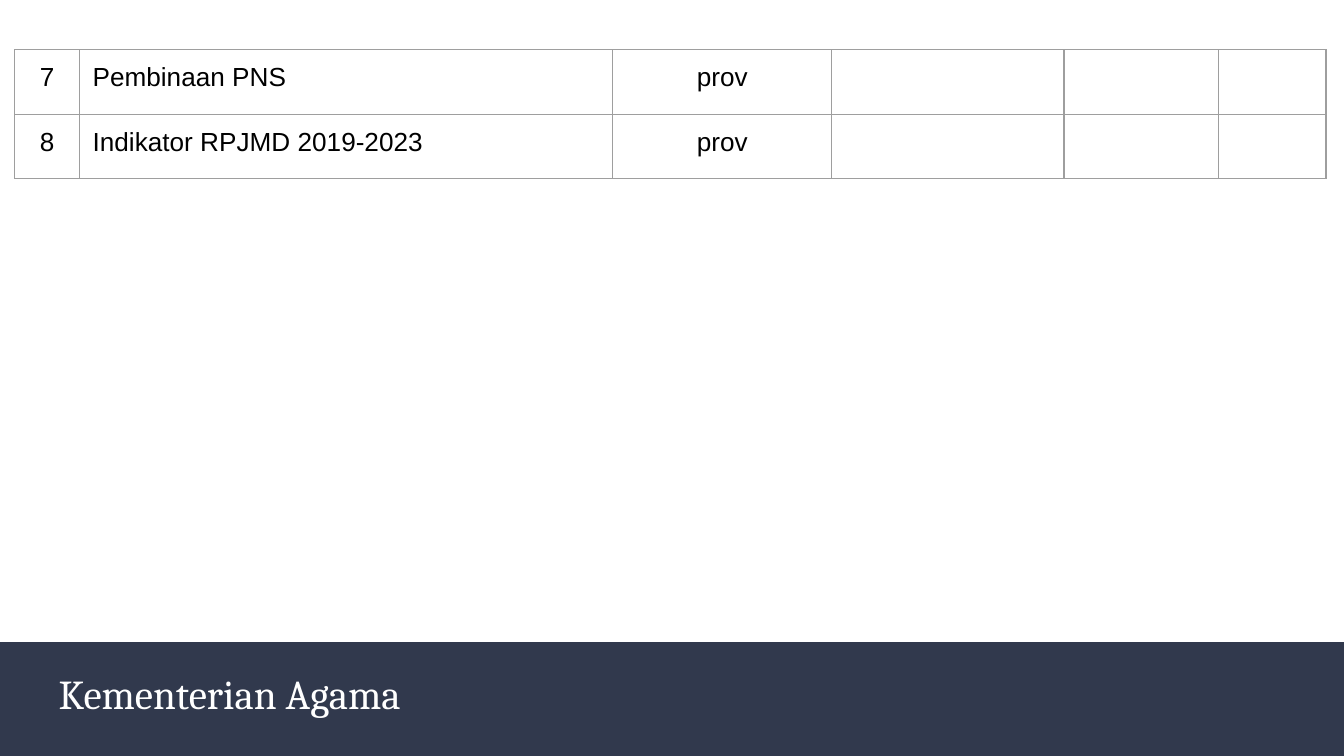
from typing import NamedTuple

from lxml import etree
from pptx import Presentation
from pptx.dml.color import RGBColor
from pptx.enum import shapes, text
from pptx.oxml import ns
from pptx.util import Cm, Pt

NAVY = RGBColor(0x31, 0x39, 0x4D)
WHITE = RGBColor(0xFF, 0xFF, 0xFF)
BLACK = RGBColor(0, 0, 0)
BORDER_GREY = RGBColor(0x9E, 0x9E, 0x9E)
INSET = Cm(0.25)
ROW_HEIGHT = Cm(1.22)


class Column(NamedTuple):
    width: float
    align: text.PP_ALIGN = text.PP_ALIGN.LEFT


class Agenda(NamedTuple):
    number: str
    topic: str
    level: str


COLUMNS = [
    Column(1.22, text.PP_ALIGN.CENTER),
    Column(10.08),
    Column(4.14, text.PP_ALIGN.CENTER),
    Column(4.39),
    Column(2.92),
    Column(2.03),
]
AGENDAS = [
    Agenda("7", "Pembinaan PNS", "prov"),
    Agenda("8", "Indikator RPJMD 2019-2023", "prov"),
]


def set_insets(target) -> None:
    """Give a cell or text frame the same inset on all four sides."""
    target.margin_left = target.margin_right = INSET
    target.margin_top = target.margin_bottom = INSET


def style_font(font, name: str, size: int, color: RGBColor) -> None:
    font.name = name
    font.size = Pt(size)
    font.color.rgb = color


def add_borders(cell) -> None:
    properties = cell._tc.get_or_add_tcPr()
    for position, side in enumerate(("lnL", "lnR", "lnT", "lnB")):
        line = etree.Element(ns.qn(f"a:{side}"), w=str(Pt(0.75)))
        fill = etree.SubElement(line, ns.qn("a:solidFill"))
        etree.SubElement(fill, ns.qn("a:srgbClr"), val=str(BORDER_GREY))
        properties.insert(position, line)


def fill_cell(cell, content: str, align: text.PP_ALIGN) -> None:
    set_insets(cell)
    cell.fill.background()
    add_borders(cell)
    cell.text = content
    paragraph = cell.text_frame.paragraphs[0]
    paragraph.alignment = align
    style_font(paragraph.font, "Arial", 14, BLACK)


def add_agenda_table(slide) -> None:
    total_width = Cm(sum(column.width for column in COLUMNS))
    table = slide.shapes.add_table(
        len(AGENDAS), len(COLUMNS), Cm(0.28), Cm(0.94),
        total_width, ROW_HEIGHT * len(AGENDAS),
    ).table
    table.first_row = table.horz_banding = False
    for index, column in enumerate(COLUMNS):
        table.columns[index].width = Cm(column.width)
    for row, agenda in enumerate(AGENDAS):
        table.rows[row].height = ROW_HEIGHT
        for index, column in enumerate(COLUMNS):
            content = agenda[index] if index < len(agenda) else ""
            fill_cell(table.cell(row, index), content, column.align)


def add_footer(slide) -> None:
    band = slide.shapes.add_shape(
        shapes.MSO_SHAPE.RECTANGLE, Cm(0), Cm(12.14), Cm(25.4), Cm(2.15))
    band.shadow.inherit = False
    band.fill.solid()
    band.fill.fore_color.rgb = NAVY
    band.line.fill.background()

    ministry = slide.shapes.add_textbox(
        Cm(0.86), Cm(12.55), Cm(22.17), Cm(1.27)).text_frame
    ministry.word_wrap = True
    ministry.vertical_anchor = text.MSO_ANCHOR.MIDDLE
    set_insets(ministry)
    ministry.text = "Kementerian Agama"
    paragraph = ministry.paragraphs[0]
    paragraph.line_spacing = 0.8
    style_font(paragraph.font, "Cambria", 22, WHITE)


def main() -> None:
    presentation = Presentation()
    presentation.slide_width = Cm(25.4)
    presentation.slide_height = Cm(14.29)
    slide = presentation.slides.add_slide(presentation.slide_layouts[6])
    slide.background.fill.solid()
    slide.background.fill.fore_color.rgb = WHITE
    add_footer(slide)
    add_agenda_table(slide)
    presentation.save("out.pptx")


if __name__ == "__main__":
    main()
